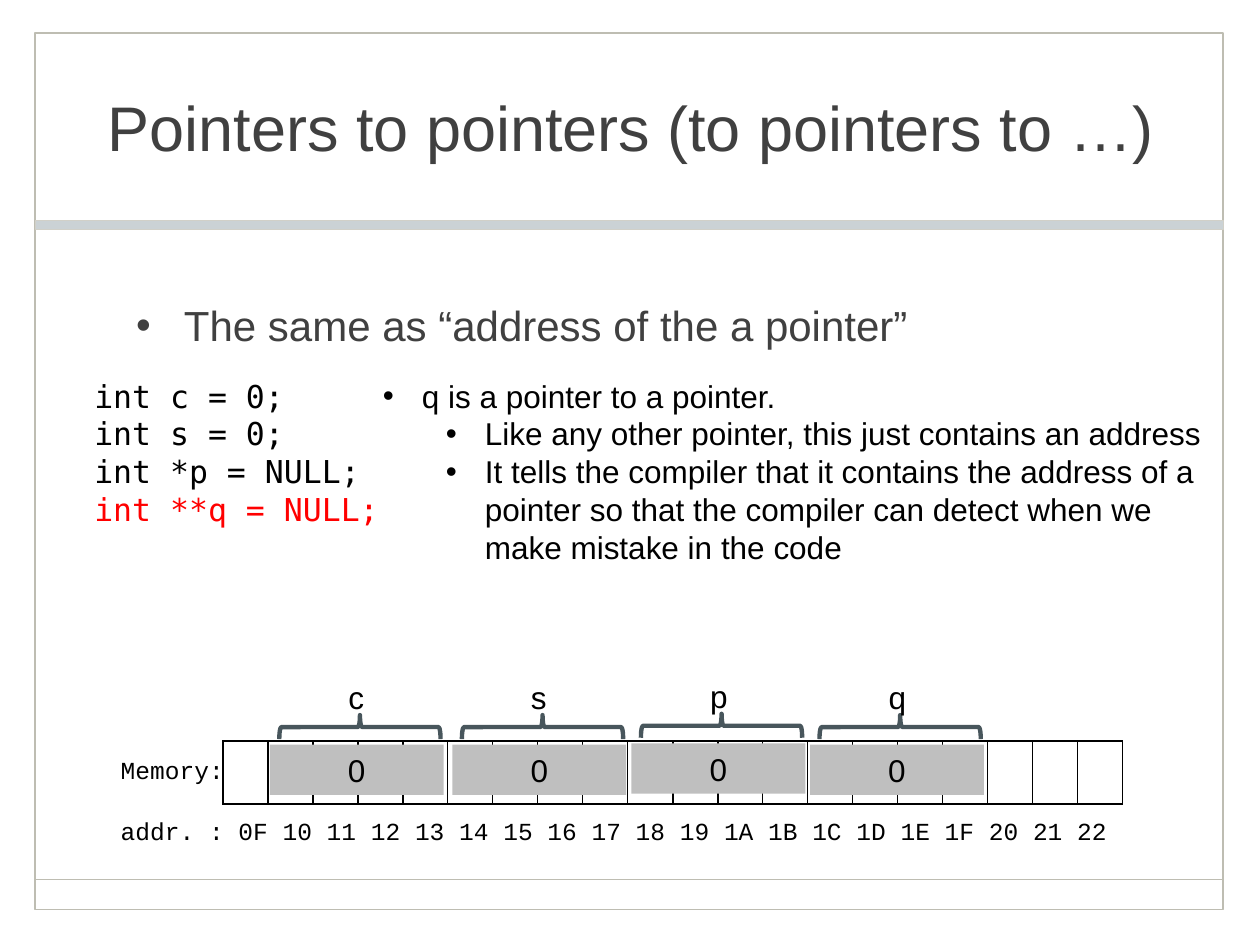
from dataclasses import dataclass
from typing import NamedTuple

from lxml.etree import SubElement
from pptx import Presentation
from pptx.dml.color import RGBColor
from pptx.enum.shapes import MSO_CONNECTOR, MSO_SHAPE
from pptx.enum.text import MSO_ANCHOR, MSO_AUTO_SIZE, PP_ALIGN
from pptx.oxml.ns import qn
from pptx.util import Inches, Pt

# The slide is a grid of 100 columns and 75 rows.
COLUMNS, ROWS = 100, 75
CELL = Inches(0.1)

BLACK = RGBColor(0x00, 0x00, 0x00)
RED = RGBColor(0xFF, 0x00, 0x00)
DARK_GRAY = RGBColor(0x40, 0x40, 0x40)
VALUE_GRAY = RGBColor(0xBF, 0xBF, 0xBF)
BRACE_GRAY = RGBColor(0x48, 0x56, 0x5C)
FRAME_GRAY = RGBColor(0xBE, 0xBD, 0xB2)
BAND_FILL = RGBColor(0xCB, 0xD2, 0xD5)
BAND_LINE = RGBColor(0xD1, 0xD0, 0xC8)

MEMORY_LEFT, MEMORY_TOP = 17.7, 58.8
BYTE_WIDTH, BYTE_HEIGHT = 3.57, 5
BYTES_PER_TABLE = 10
ADDRESSES = " ".join(f"{address:02X}" for address in range(0x0F, 0x23))


class Box(NamedTuple):
    """A place on the slide, in grid cells."""
    left: float
    top: float
    width: float
    height: float

    def lengths(self):
        return [round(value * CELL) for value in self]


class Line(NamedTuple):
    text: str
    color: RGBColor = BLACK
    level: int = 0
    space_before: float = 0


@dataclass
class Variable:
    """A named value in memory; first_byte counts byte cells from the left."""
    name: str
    first_byte: float
    top: float = 59.1
    value: str = "0"


def write(shape, lines: list[Line], *, font="Arial", size=18, wrap=True,
          align=PP_ALIGN.LEFT, anchor=MSO_ANCHOR.TOP, indents=None, hanging=0.31):
    """Fill a shape with lines; indents gives the bullet indent of each level in inches."""
    frame = shape.text_frame
    frame.word_wrap = wrap
    frame.auto_size = MSO_AUTO_SIZE.NONE
    frame.vertical_anchor = anchor
    for index, line in enumerate(lines):
        paragraph = frame.paragraphs[0] if index == 0 else frame.add_paragraph()
        paragraph.level = line.level
        paragraph.alignment = align
        paragraph.space_before = Pt(line.space_before)
        if indents:
            properties = paragraph._p.get_or_add_pPr()
            properties.set("marL", str(Inches(indents[line.level])))
            properties.set("indent", str(-Inches(hanging)))
            SubElement(properties, qn("a:buFont"), typeface="Arial")
            SubElement(properties, qn("a:buChar"), char="•")
        run = paragraph.add_run()
        run.text = line.text
        run.font.name = font
        run.font.size = Pt(size)
        run.font.color.rgb = line.color


def add_text(shapes, box: Box, lines: list[Line], **text_format):
    write(shapes.add_textbox(*box.lengths()), lines, **text_format)


def add_preset(shapes, preset: MSO_SHAPE, box: Box, *, fill=None, line=None, width=1.0):
    shape = shapes.add_shape(preset, *box.lengths())
    shape.shadow.inherit = False
    if fill is None:
        shape.fill.background()
    else:
        shape.fill.solid()
        shape.fill.fore_color.rgb = fill
    if line is None:
        shape.line.fill.background()
    else:
        shape.line.color.rgb = line
        shape.line.width = Pt(width)
    return shape


def move_placeholder(placeholder, box: Box):
    placeholder.left, placeholder.top, placeholder.width, placeholder.height = box.lengths()


def add_frame(shapes):
    add_preset(shapes, MSO_SHAPE.RECTANGLE, Box(2.8, 2.6, 94.3, 69.6), line=FRAME_GRAY)
    left, top, right, bottom = Box(2.8, 69.8, 97.1, 69.8).lengths()
    rule = shapes.add_connector(MSO_CONNECTOR.STRAIGHT, left, top, right, bottom)
    rule.line.color.rgb = FRAME_GRAY
    rule.line.width = Pt(1)
    SubElement(rule._element.spPr, qn("a:effectLst"))
    add_preset(shapes, MSO_SHAPE.RECTANGLE, Box(2.8, 17.5, 94.3, 0.7),
               fill=BAND_FILL, line=BAND_LINE, width=0.25)


def border_cell(cell):
    properties = cell._tc.get_or_add_tcPr()
    for side in ("a:lnL", "a:lnR", "a:lnT", "a:lnB"):
        border = SubElement(properties, qn(side), w=str(Pt(1)))
        fill = SubElement(border, qn("a:solidFill"))
        SubElement(fill, qn("a:srgbClr"), val=str(BLACK))


def add_memory_table(shapes, first_byte: int):
    box = Box(MEMORY_LEFT + first_byte * BYTE_WIDTH, MEMORY_TOP,
              BYTES_PER_TABLE * BYTE_WIDTH, BYTE_HEIGHT)
    table = shapes.add_table(1, BYTES_PER_TABLE, *box.lengths()).table
    table.first_row = table.horz_banding = False
    for cell in table.iter_cells():
        border_cell(cell)
        cell.fill.background()


def add_variable(shapes, variable: Variable):
    """Draw the value over its bytes, with a brace and the name above."""
    group = shapes.add_group_shape().shapes
    left, top = MEMORY_LEFT + variable.first_byte * BYTE_WIDTH, variable.top
    value = add_preset(group, MSO_SHAPE.RECTANGLE, Box(left, top, 13.8, 4), fill=VALUE_GRAY)
    write(value, [Line(variable.value)], align=PP_ALIGN.CENTER)
    brace = add_preset(group, MSO_SHAPE.LEFT_BRACE, Box(left + 6.2, top - 7.8, 1.9, 12.8),
                       line=BRACE_GRAY, width=2.5)
    brace.rotation = 90
    add_text(group, Box(left + 5.25, top - 5.75, 3.2, 4), [Line(variable.name)], wrap=False)


def main():
    presentation = Presentation()
    presentation.slide_width = COLUMNS * CELL
    presentation.slide_height = ROWS * CELL
    slide = presentation.slides.add_slide(presentation.slide_layouts[1])
    shapes = slide.shapes
    title, body = slide.placeholders

    add_frame(shapes)
    move_placeholder(title, Box(5.1, 2.7, 90, 14.7))
    write(title, [Line("Pointers to pointers (to pointers to …)", DARK_GRAY)],
          size=36, align=PP_ALIGN.CENTER, anchor=MSO_ANCHOR.MIDDLE)
    move_placeholder(body, Box(9.8, 23.3, 80.3, 43))
    write(body, [Line("The same as “address of the a pointer”", DARK_GRAY)],
          size=24, indents=[0.38], hanging=0.38)

    add_text(shapes, Box(6.5, 29.4, 24.7, 13.1), [
        Line("int c = 0;"),
        Line("int s = 0;"),
        Line("int *p = NULL;"),
        Line("int **q = NULL;", RED),
    ], font="DejaVu Sans Mono", wrap=False)
    add_text(shapes, Box(29.4, 29.4, 68.7, 16.2), [
        Line("q is a pointer to a pointer."),
        Line("Like any other pointer, this just contains an address", level=1),
        Line("It tells the compiler that it contains the address of a pointer so that "
             "the compiler can detect when we make mistake in the code", level=1),
    ], indents=[0.31, 0.81])

    add_text(shapes, Box(8.6, 59.4, 81.9, 8.1), [
        Line("Memory:"),
        Line(f"addr. : {ADDRESSES}", space_before=18),
    ], font="Courier New", size=14, wrap=False)
    for first_byte in (0, BYTES_PER_TABLE):
        add_memory_table(shapes, first_byte)
    for variable in (Variable("c", 1.04), Variable("s", 5.1),
                     Variable("p", 9.08, top=59), Variable("q", 13.05)):
        add_variable(shapes, variable)

    presentation.save("out.pptx")


if __name__ == "__main__":
    main()
